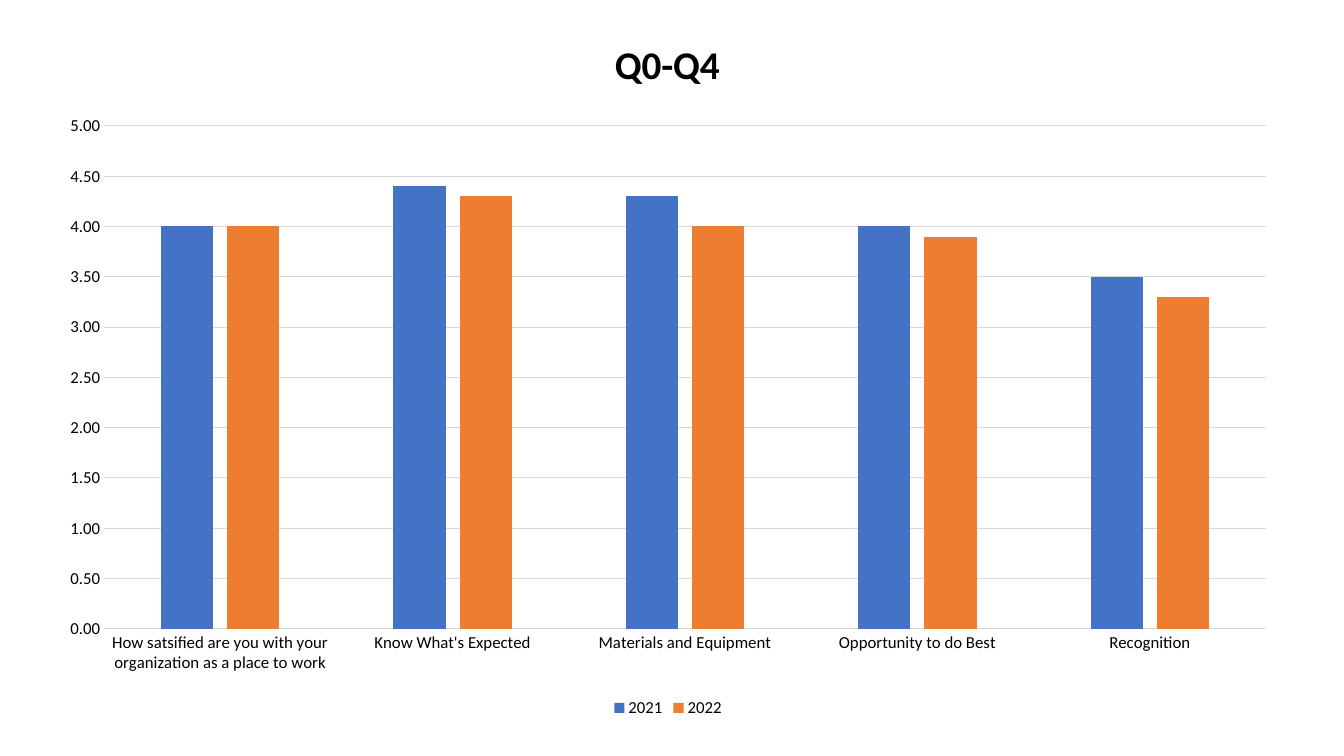
from lxml import etree
from pptx import Presentation
from pptx import util as u
from pptx.chart import data as chart_data
from pptx.dml import color
from pptx.enum import chart as kinds
from pptx.oxml import ns

TITLE = "Q0-Q4"
QUESTIONS = [
    "How satsified are you with your organization as a place to work",
    "Know What's Expected",
    "Materials and Equipment",
    "Opportunity to do Best",
    "Recognition",
]
SCORES = {
    "2021": (4, 4.4, 4.3, 4, 3.5),
    "2022": (4, 4.3, 4, 3.9, 3.3),
}
COLORS = {"2021": "4472C4", "2022": "ED7D31", "text": "000000", "grid": "D9D9D9"}
FONT = "Calibri"
PX = 9071
SLIDE = (1344, 756)
CHART = (45, 11, 1246, 711)
PLOT = (104, 126, 1162, 503)
TITLE_SPOT = (608, 31)


def rgb(name):
    return color.RGBColor.from_string(COLORS[name])


def style_font(font, size, bold=False):
    font.name = FONT
    font.size = u.Pt(size)
    font.bold = bold
    font.color.rgb = rgb("text")


def style_line(line):
    line.color.rgb = rgb("grid")
    line.width = u.Pt(0.75)


def place(parent, left, top, width=None, height=None):
    for old in parent.findall(ns.qn("c:layout")):
        parent.remove(old)
    layout = etree.Element(ns.qn("c:layout"))
    parent.insert(0 if parent.find(ns.qn("c:tx")) is None else 1, layout)
    manual = etree.SubElement(layout, ns.qn("c:manualLayout"))
    settings = [("layoutTarget", "inner")] if width else []
    settings += [("xMode", "edge"), ("yMode", "edge")]
    settings += [("x", (left - CHART[0]) / CHART[2]), ("y", (top - CHART[1]) / CHART[3])]
    if width:
        settings += [("w", width / CHART[2]), ("h", height / CHART[3])]
    for tag, value in settings:
        text = value if isinstance(value, str) else f"{value:.4f}"
        etree.SubElement(manual, ns.qn(f"c:{tag}")).set("val", text)


deck = Presentation()
deck.slide_width, deck.slide_height = (side * PX for side in SLIDE)
page = deck.slides.add_slide(deck.slide_layouts[6])

data = chart_data.CategoryChartData(number_format="0.00")
data.categories = QUESTIONS
for year, values in SCORES.items():
    data.add_series(year, values)
chart = page.shapes.add_chart(
    kinds.XL_CHART_TYPE.COLUMN_CLUSTERED, *(side * PX for side in CHART), data
).chart
style_font(chart.font, 10)

chart.has_title = True
para = chart.chart_title.text_frame.paragraphs[0]
para.text = TITLE
style_font(para.runs[0].font, 28, True)
place(chart.chart_title._element, *TITLE_SPOT)

bars = chart.plots[0]
bars.gap_width = 219
bars.overlap = -27
bars.vary_by_categories = False
for series in bars.series:
    series.format.fill.solid()
    series.format.fill.fore_color.rgb = rgb(series.name)
place(chart._chartSpace.chart.plotArea, *PLOT)

for axis in (chart.category_axis, chart.value_axis):
    axis.major_tick_mark = axis.minor_tick_mark = kinds.XL_TICK_MARK.NONE
    style_font(axis.tick_labels.font, 12)
style_line(chart.category_axis.format.line)

scale = chart.value_axis
scale.minimum_scale, scale.maximum_scale, scale.major_unit = 0, 5, 0.5
scale.format.line.fill.background()
scale.has_major_gridlines = True
style_line(scale.major_gridlines.format.line)
scale.tick_labels.number_format = "0.00"
scale.tick_labels.number_format_is_linked = False

chart.has_legend = True
chart.legend.position = kinds.XL_LEGEND_POSITION.BOTTOM
chart.legend.include_in_layout = False
style_font(chart.legend.font, 12)

deck.save("out.pptx")
